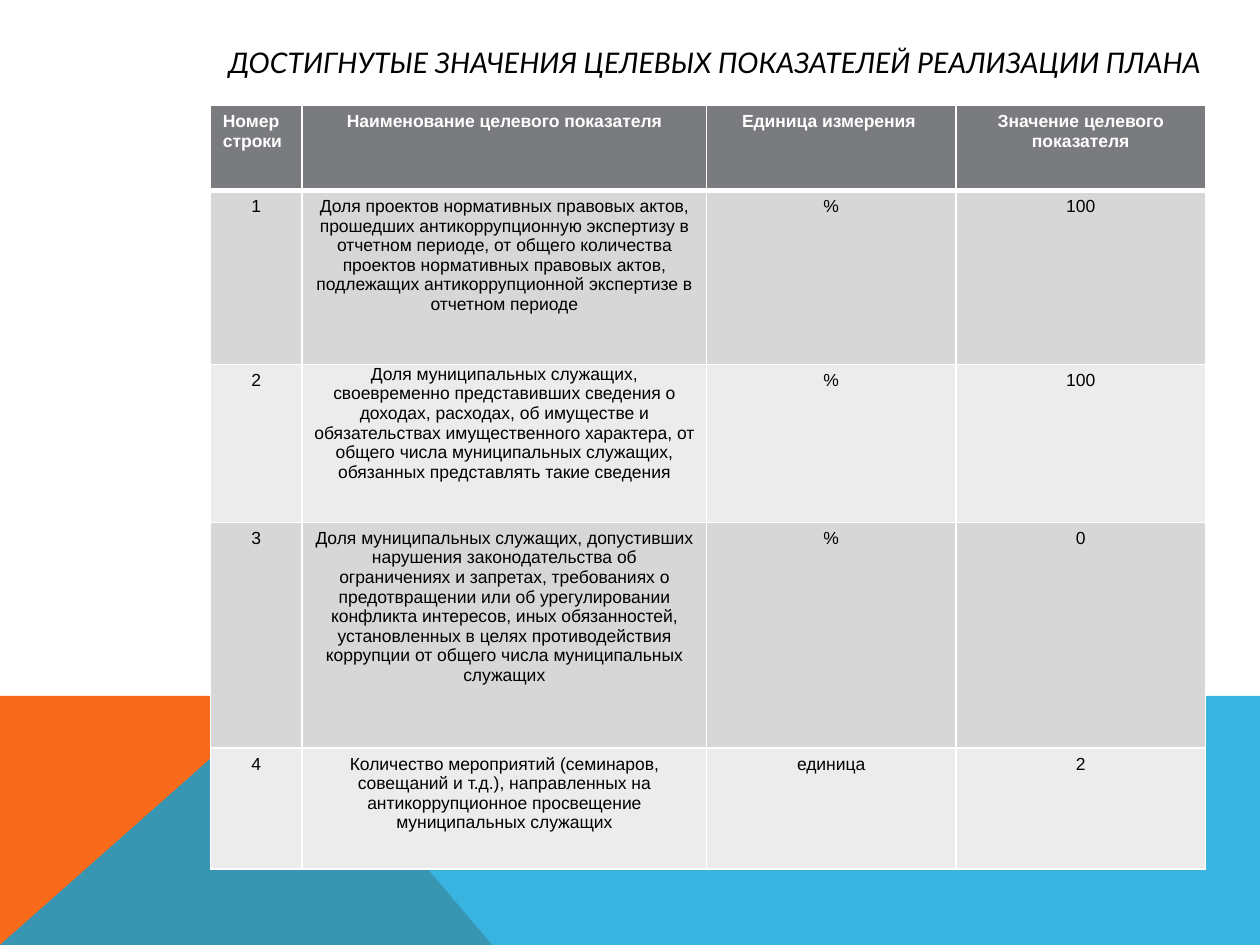
from lxml import etree
from pptx import Presentation
from pptx.dml.color import RGBColor
from pptx.enum.text import MSO_ANCHOR as Anchor, PP_ALIGN as Align
from pptx.oxml.ns import qn
from pptx.util import Cm, Pt

HEADINGS = ("Номер строки", "Наименование целевого показателя",
            "Единица измерения ", "Значение целевого показателя")
INDICATORS = (
    ("1", "Доля проектов нормативных правовых актов, прошедших антикоррупционную "
          "экспертизу в отчетном периоде, от общего количества проектов нормативных "
          "правовых актов, подлежащих антикоррупционной экспертизе в отчетном периоде",
     "%", "100"),
    ("2", "Доля муниципальных служащих, своевременно представивших сведения о доходах, "
          "расходах, об имуществе и обязательствах имущественного характера, от общего "
          "числа муниципальных служащих, обязанных представлять такие сведения",
     "%", "100"),
    ("3", "Доля муниципальных служащих, допустивших нарушения законодательства об "
          "ограничениях и запретах, требованиях о предотвращении или об урегулировании "
          "конфликта интересов, иных обязанностей, установленных в целях противодействия "
          "коррупции от общего числа муниципальных служащих",
     "%", "0"),
    ("4", "Количество мероприятий (семинаров, совещаний и т.д.), направленных на "
          "антикоррупционное просвещение муниципальных служащих",
     "единица", "2"),
)
COLUMN_WIDTHS = (1.85, 8.15, 5.03, 5.03)
ROW_HEIGHTS = (1.71, 3.51, 3.18, 4.55, 2.44)


def color(code):
    return RGBColor.from_string(code)


class ReportSlide:
    title_font, body_font = "Lato", "Arial"
    black, white = "000000", "FFFFFF"
    header_fill, band_fills = "797B7E", ("D7D7D8", "ECECEC")

    def __init__(self, deck):
        self.slide = deck.slides.add_slide(deck.slide_layouts[5])

    def polygon(self, points, fill, opacity=100):
        start, *rest = [(Cm(x), Cm(y)) for x, y in points]
        builder = self.slide.shapes.build_freeform(*start)
        builder.add_line_segments(rest, close=True)
        area = builder.convert_to_shape()
        area.shadow.inherit = False
        area.fill.solid()
        area.fill.fore_color.rgb = color(fill)
        area.line.fill.background()
        if opacity < 100:
            tint = area.fill._xPr.find(qn("a:solidFill"))[0]
            etree.SubElement(tint, qn("a:alpha"), val=str(opacity * 1000))

    def title(self, text, left, top, width, height):
        heading = self.slide.shapes.title
        heading.left, heading.top = Cm(left), Cm(top)
        heading.width, heading.height = Cm(width), Cm(height)
        # Placed in front of the background areas
        self.slide.shapes._spTree.append(heading._element)
        frame = heading.text_frame
        frame.text = text
        frame.word_wrap = True
        frame.vertical_anchor = Anchor.MIDDLE
        self.format(frame.paragraphs[0], self.title_font, 16.2, self.black, italic=True)

    def format(self, paragraph, name, size, ink, bold=False, italic=False,
               align=Align.CENTER):
        paragraph.alignment = align
        font = paragraph.font
        font.name, font.size = name, Pt(size)
        font.bold, font.italic = bold, italic
        font.color.rgb = color(ink)

    def border(self, cell, side, width):
        line = etree.SubElement(cell._tc.get_or_add_tcPr(), qn(f"a:ln{side}"),
                                w=str(Pt(width)))
        fill = etree.SubElement(line, qn("a:solidFill"))
        etree.SubElement(fill, qn("a:srgbClr"), val=self.white)

    def cell(self, cell, text, row, column):
        # The rule under the header row is heavier
        for side in "LRTB":
            heavy = (row, side) in ((0, "B"), (1, "T"))
            self.border(cell, side, 3 if heavy else 1)
        cell.fill.solid()
        fill = self.band_fills[(row - 1) % 2] if row else self.header_fill
        cell.fill.fore_color.rgb = color(fill)
        cell.text = text
        self.format(cell.text_frame.paragraphs[0], self.body_font, 10,
                    self.black if row else self.white, bold=row == 0,
                    align=Align.CENTER if row or column else Align.LEFT)

    def table(self, records, left, top, widths, heights):
        table = self.slide.shapes.add_table(
            len(records), len(widths), Cm(left), Cm(top),
            Cm(sum(widths)), Cm(sum(heights))).table
        for column, width in zip(table.columns, widths):
            column.width = Cm(width)
        for r, (record, height) in enumerate(zip(records, heights)):
            table.rows[r].height = Cm(height)
            for c, text in enumerate(record):
                self.cell(table.cell(r, c), text, r, c)
        return table


def main():
    deck = Presentation()
    deck.slide_width, deck.slide_height = Cm(25.4), Cm(19.05)
    report = ReportSlide(deck)

    # Coloured areas along the bottom
    right, bottom, horizon, peak = 25.4, 19.05, 14.03, 5.67
    report.polygon([(0, bottom), (0, horizon), (peak, horizon), (9.92, bottom)],
                   "F96A1B")
    report.polygon([(0, bottom), (peak, horizon), (right, horizon), (right, bottom)],
                   "08A1D9", opacity=80)

    # Heading
    report.title("ДОСТИГНУТЫЕ ЗНАЧЕНИЯ ЦЕЛЕВЫХ ПОКАЗАТЕЛЕЙ РЕАЛИЗАЦИИ ПЛАНА",
                 3.99, 0.76, 20.83, 0.97)

    # Indicators
    indicators = report.table((HEADINGS, *INDICATORS), 4.24, 2.13,
                              COLUMN_WIDTHS, ROW_HEIGHTS)
    servants = indicators.cell(2, 1)
    servants.margin_left = servants.margin_right = Cm(0.19)
    servants.margin_top = servants.margin_bottom = 0

    deck.save("out.pptx")


if __name__ == "__main__":
    main()
